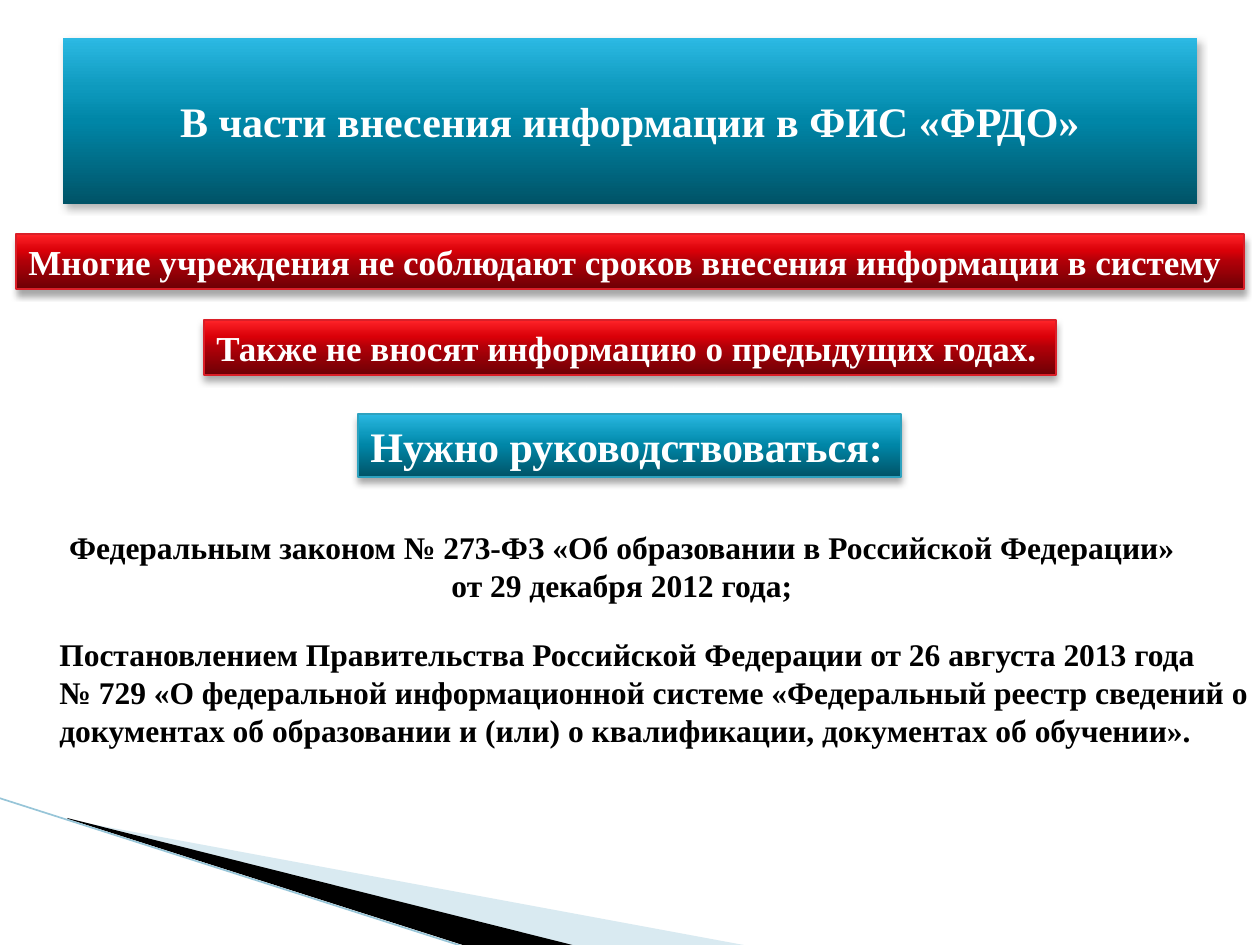
from lxml import etree
from pptx import Presentation
from pptx import util as u
from pptx.dml.color import RGBColor
from pptx.enum import shapes, text
from pptx.oxml import ns

PX = u.Inches(1) // 126
FONT = "Times New Roman"
WHITE = RGBColor(0xFF, 0xFF, 0xFF)
BLACK = RGBColor(0, 0, 0)
PALE_BLUE = RGBColor(0xA0, 0xCB, 0xDC)
LINE_BLUE = RGBColor(0x97, 0xC5, 0xD8)
TEAL = RGBColor(0x2D, 0xA2, 0xBF)
RED = RGBColor(0xDA, 0x1F, 0x28)
TEAL_STOPS = [
    (0, RGBColor(0x00, 0x53, 0x67)),
    (50, RGBColor(0x00, 0x86, 0xA7)),
    (70, RGBColor(0x0E, 0x9A, 0xBE)),
    (100, RGBColor(0x2C, 0xB9, 0xE3)),
]
RED_STOPS = [
    (0, RGBColor(0x6D, 0x00, 0x05)),
    (50, RGBColor(0xB0, 0x00, 0x08)),
    (70, RGBColor(0xDA, 0x00, 0x08)),
    (100, RGBColor(0xFF, 0x24, 0x29)),
]
TITLE_SHADOW = {"alpha": 30, "blur": 4.5, "distance": 2.6, "angle": 53}
BANNER_SHADOW = {"alpha": 35, "blur": 4, "distance": 3, "angle": 90}


def scaled(*lengths):
    return [length * PX for length in lengths]


def add_element(parent, tag, **attributes):
    values = {name: str(value) for name, value in attributes.items()}
    return etree.SubElement(parent, ns.qn(tag), values)


def apply_gradient(shape, stops):
    shape.fill.gradient()
    shape.fill.gradient_angle = 90
    stop_list = shape._element.spPr.find(".//" + ns.qn("a:gsLst"))
    for stop in list(stop_list):
        stop_list.remove(stop)
    for position, color in stops:
        stop = add_element(stop_list, "a:gs", pos=position * 1000)
        add_element(stop, "a:srgbClr", val=color)


def apply_shadow(shape, alpha, blur, distance, angle):
    shape.shadow.inherit = False
    effects = shape._element.spPr.find(ns.qn("a:effectLst"))
    shadow = add_element(effects, "a:outerShdw", blurRad=u.Pt(blur),
                         dist=u.Pt(distance), dir=angle * 60000, rotWithShape=0)
    color = add_element(shadow, "a:srgbClr", val=BLACK)
    add_element(color, "a:alpha", val=alpha * 1000)


def write_text(shape, lines, size, color, align, wrap, anchor):
    frame = shape.text_frame
    frame_format = {"word_wrap": wrap, "vertical_anchor": anchor}
    for name, value in frame_format.items():
        setattr(frame, name, value)
    font_format = {"name": FONT, "size": u.Pt(size), "bold": True}
    for index, line in enumerate(lines):
        paragraph = frame.paragraphs[0] if index == 0 else frame.add_paragraph()
        paragraph.alignment = align
        run = paragraph.add_run()
        run.text = line
        for name, value in font_format.items():
            setattr(run.font, name, value)
        run.font.color.rgb = color


def add_panel(slide, box, stops, shadow):
    shape = slide.shapes.add_shape(shapes.MSO_SHAPE.RECTANGLE, *scaled(*box))
    apply_gradient(shape, stops)
    shape.line.fill.background()
    apply_shadow(shape, **shadow)
    return shape


def add_title(slide, box, line):
    shape = add_panel(slide, box, TEAL_STOPS, TITLE_SHADOW)
    write_text(shape, [line], 24, WHITE, text.PP_ALIGN.CENTER, True,
               text.MSO_ANCHOR.MIDDLE)


def add_banner(slide, box, line, size, stops, outline):
    shape = add_panel(slide, box, stops, BANNER_SHADOW)
    shape.line.color.rgb = outline
    shape.line.width = u.Pt(0.75)
    write_text(shape, [line], size, WHITE, text.PP_ALIGN.LEFT, False,
               text.MSO_ANCHOR.TOP)


def add_reference(slide, box, lines, align, wrap):
    shape = slide.shapes.add_textbox(*scaled(*box))
    write_text(shape, lines, 18, BLACK, align, wrap, text.MSO_ANCHOR.TOP)


def add_wedge(slide, left, top, points, color, alpha=100):
    start, *rest = [(left + x, top + y) for x, y in points]
    builder = slide.shapes.build_freeform(*start, scale=PX)
    builder.add_line_segments(rest, close=True)
    shape = builder.convert_to_shape()
    shape.fill.solid()
    shape.fill.fore_color.rgb = color
    shape.line.fill.background()
    shape.shadow.inherit = False
    fill_color = shape._element.spPr.find(".//" + ns.qn("a:srgbClr"))
    add_element(fill_color, "a:alpha", val=alpha * 1000)


def add_corner(slide, left, top):
    add_wedge(slide, left + 70, top + 21,
              [(0, 1), (680, 127), (505, 127), (0, 0)], PALE_BLUE, 40)
    add_wedge(slide, left + 68, top + 20,
              [(0, 0), (509, 128), (402, 129), (1, 1)], BLACK)
    edge = slide.shapes.add_connector(
        shapes.MSO_CONNECTOR.STRAIGHT,
        *scaled(left, top, left + 469, top + 150))
    edge.line.color.rgb = LINE_BLUE
    edge.line.width = u.Pt(0.95)
    add_element(edge._element.spPr, "a:effectLst")


def main():
    presentation = Presentation()
    presentation.slide_width, presentation.slide_height = scaled(1260, 945)
    slide = presentation.slides.add_slide(presentation.slide_layouts[6])
    slide.background.fill.solid()
    slide.background.fill.fore_color.rgb = WHITE

    add_corner(slide, -1, 798)
    add_title(slide, (63, 38, 1134, 166),
              "В части внесения информации в ФИС «ФРДО»")
    banners = [
        ((16, 234, 1228, 55), 20, RED_STOPS, RED,
         "Многие учреждения не соблюдают сроков внесения информации в систему"),
        ((204, 320, 852, 55), 20, RED_STOPS, RED,
         "Также не вносят информацию о предыдущих годах."),
        ((358, 414, 543, 63), 24, TEAL_STOPS, TEAL,
         "Нужно руководствоваться:"),
    ]
    for box, size, stops, outline, line in banners:
        add_banner(slide, box, line, size, stops, outline)
    add_reference(slide, (47, 522, 1150, 89), [
        "Федеральным законом № 273-ФЗ «Об образовании в Российской Федерации»",
        "от 29 декабря 2012 года;",
    ], text.PP_ALIGN.CENTER, False)
    add_reference(slide, (47, 629, 1260, 127), [
        "Постановлением Правительства Российской Федерации от 26 августа 2013 года",
        "№ 729 «О федеральной информационной системе «Федеральный реестр сведений о "
        "документах об образовании и (или) о квалификации, документах об обучении».",
    ], text.PP_ALIGN.LEFT, True)
    presentation.save("out.pptx")


if __name__ == "__main__":
    main()
